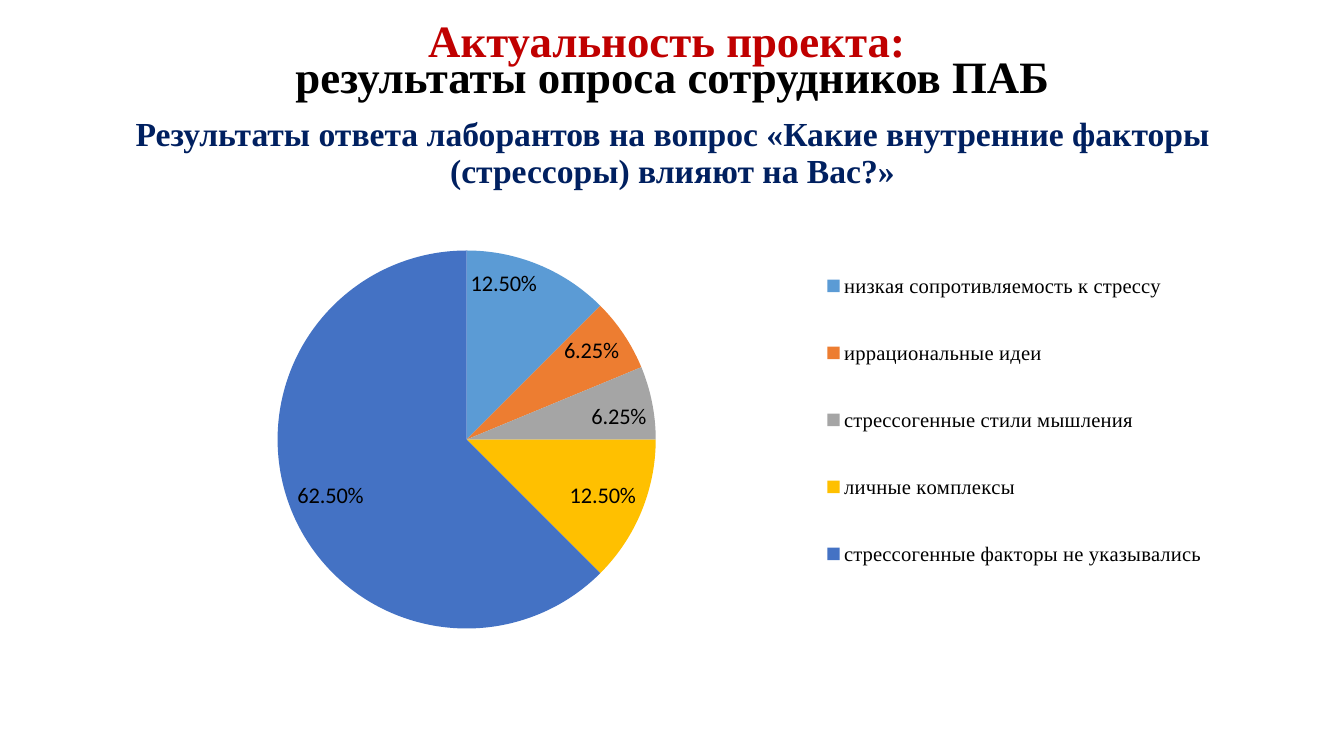
from lxml import etree
from pptx import Presentation
from pptx.chart.data import CategoryChartData
from pptx.dml.color import RGBColor
from pptx.enum.chart import XL_CHART_TYPE, XL_LABEL_POSITION, XL_LEGEND_POSITION
from pptx.enum.text import MSO_ANCHOR, MSO_AUTO_SIZE, PP_ALIGN
from pptx.oxml.ns import qn
from pptx.util import Inches, Pt

PIE = XL_CHART_TYPE.PIE
INSIDE_END = XL_LABEL_POSITION.INSIDE_END
LEGEND_RIGHT = XL_LEGEND_POSITION.RIGHT
MIDDLE = MSO_ANCHOR.MIDDLE
NO_FIT = MSO_AUTO_SIZE.NONE
CENTER = PP_ALIGN.CENTER

RED = RGBColor(0xC0, 0x00, 0x00)
BLACK = RGBColor(0x00, 0x00, 0x00)
NAVY = RGBColor(0x00, 0x20, 0x60)
SERIF = "Times New Roman"

FACTORS = [
    ("низкая сопротивляемость к стрессу", 0.125, RGBColor(0x5B, 0x9B, 0xD5)),
    ("иррациональные идеи", 0.0625, RGBColor(0xED, 0x7D, 0x31)),
    ("стрессогенные стили мышления", 0.0625, RGBColor(0xA5, 0xA5, 0xA5)),
    ("личные комплексы", 0.125, RGBColor(0xFF, 0xC0, 0x00)),
    ("стрессогенные факторы не указывались", 0.625, RGBColor(0x44, 0x72, 0xC4)),
]


def add_line(para, text, size, color, spacing):
    para.alignment = CENTER
    para.line_spacing = spacing
    span = para.add_run()
    span.text = text
    span.font.name = SERIF
    span.font.size = Pt(size)
    span.font.bold = True
    span.font.color.rgb = color


def set_layout(element, before, **settings):
    """Place a chart part by shares of the chart's size."""
    for old in element.findall(qn("c:layout")):
        element.remove(old)
    layout = etree.Element(qn("c:layout"))
    manual = etree.SubElement(layout, qn("c:manualLayout"))
    for name, value in settings.items():
        etree.SubElement(manual, qn(f"c:{name}")).set("val", str(value))
    element.find(qn(before)).addprevious(layout)


deck = Presentation()
deck.slide_width = Inches(13.33)
deck.slide_height = Inches(7.5)
page = deck.slides.add_slide(deck.slide_layouts[5])

# All three blocks share one column
left, width = Inches(0.92), Inches(11.5)

# Question
title = page.shapes.title
title.left, title.top, title.width, title.height = left, Inches(1.06), width, Inches(0.94)
title.text_frame.word_wrap = True
title.text_frame.auto_size = NO_FIT
title.text_frame.vertical_anchor = MIDDLE
add_line(
    title.text_frame.paragraphs[0],
    "Результаты ответа лаборантов на вопрос «Какие внутренние факторы (стрессоры) влияют на Вас?»",
    24, NAVY, 0.9,
)

# Pie of answers
data = CategoryChartData(number_format="0.00%")
data.categories = [name for name, share, color in FACTORS]
data.add_series("Series 1", [share for name, share, color in FACTORS])
chart = page.shapes.add_chart(PIE, left, Inches(2), width, Inches(4.76), data).chart
chart.has_title = False
chart.font.name = "Calibri"
chart.font.size = Pt(10)
chart.font.color.rgb = BLACK

plot = chart.plots[0]
plot.vary_by_categories = True
for index, (name, share, color) in enumerate(FACTORS):
    fill = plot.series[0].points[index].format.fill
    fill.solid()
    fill.fore_color.rgb = color

plot.has_data_labels = True
labels = plot.data_labels
labels.show_value = True
labels.show_percentage = False
labels.number_format = "0.00%"
labels.number_format_is_linked = False
labels.position = INSIDE_END
labels.font.name = "Calibri"
labels.font.size = Pt(16)
labels.font.color.rgb = BLACK

chart.has_legend = True
legend = chart.legend
legend.position = LEGEND_RIGHT
legend.include_in_layout = False
legend.font.name = SERIF
legend.font.size = Pt(14.7)
legend.font.color.rgb = BLACK

plot_area = chart.element.find(f".//{qn('c:plotArea')}")
set_layout(plot_area, "c:pieChart", layoutTarget="inner", xMode="edge", yMode="edge",
           x=0.073, y=0.102, w=0.499, h=0.788)
legend_part = chart.element.find(f".//{qn('c:legend')}")
set_layout(legend_part, "c:overlay", xMode="edge", yMode="edge",
           x=0.61, y=0.06, w=0.37, h=0.79)

# Heading
heading = page.shapes.add_textbox(left, Inches(0.24), width, Inches(0.83))
frame = heading.text_frame
frame.word_wrap = True
frame.vertical_anchor = MIDDLE
add_line(frame.paragraphs[0], "Актуальность проекта: ", 32, RED, Pt(26))
add_line(frame.add_paragraph(), "результаты опроса сотрудников ПАБ", 32, BLACK, Pt(26))

deck.save("out.pptx")
